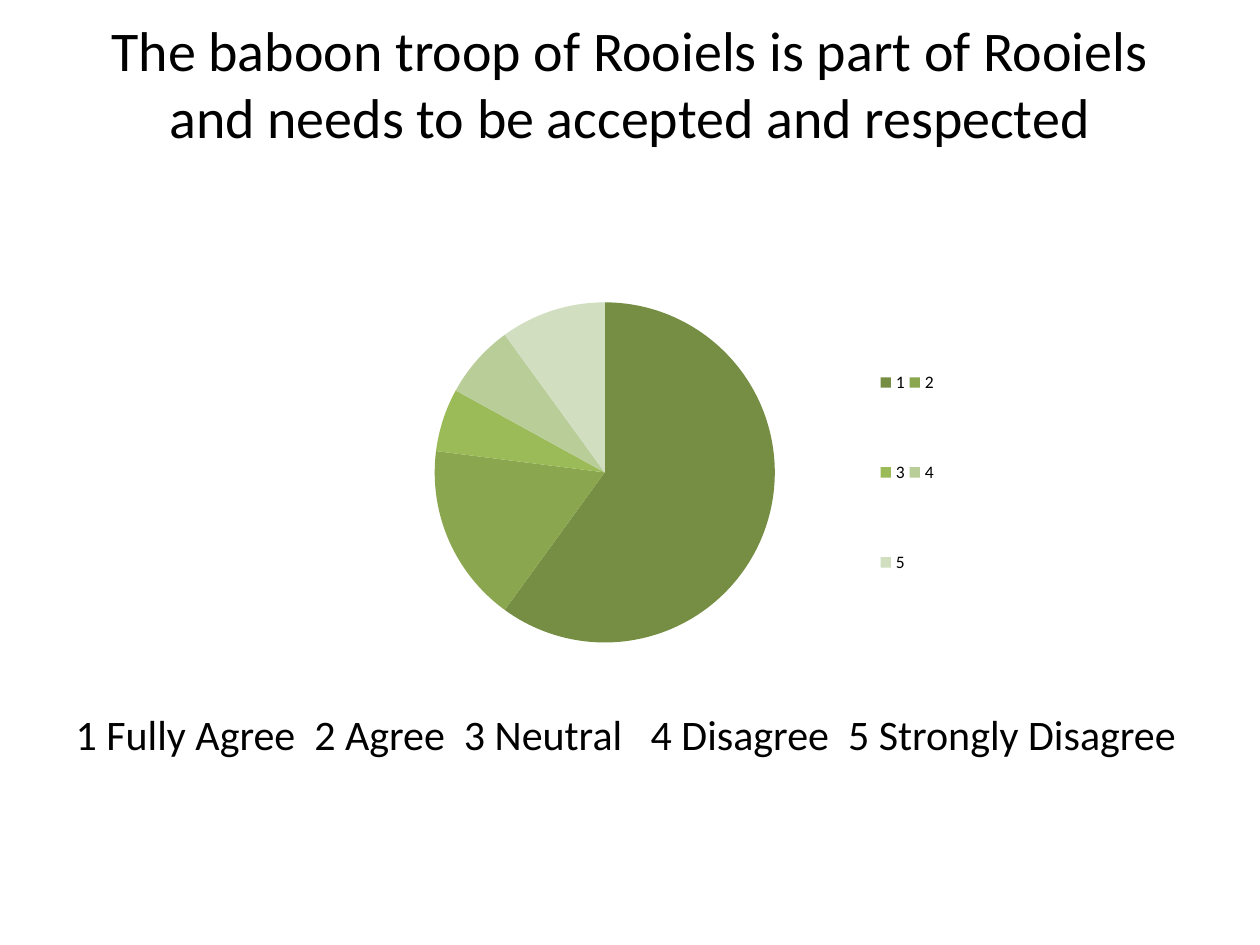
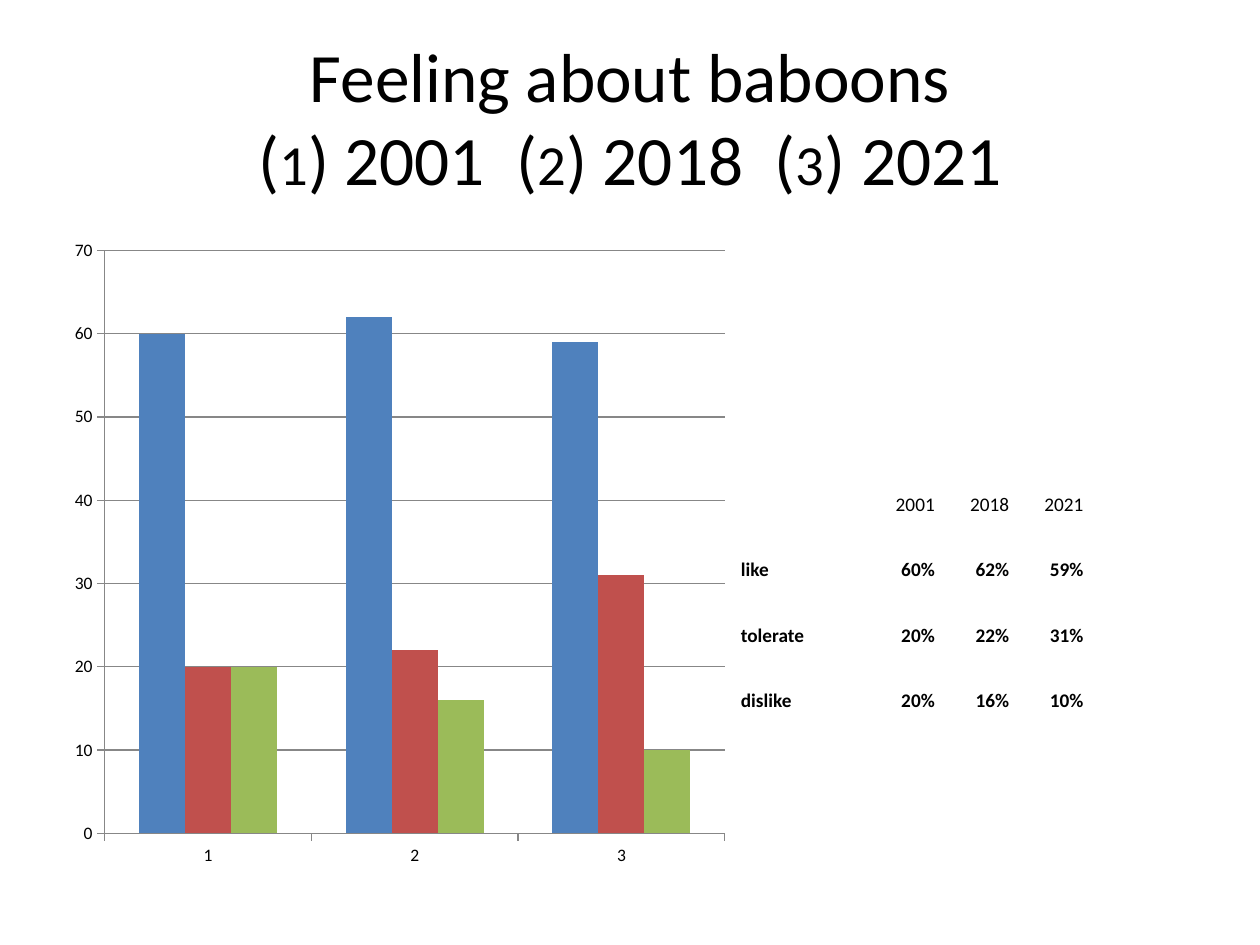
from lxml.etree import SubElement
from pptx import Presentation
from pptx.chart.data import CategoryChartData
from pptx.dml.color import RGBColor
from pptx.enum.chart import XL_CHART_TYPE, XL_LEGEND_POSITION, XL_TICK_MARK
from pptx.enum.text import MSO_ANCHOR, MSO_AUTO_SIZE, PP_ALIGN
from pptx.oxml.ns import qn
from pptx.util import Inches, Pt

FONT = "Calibri"
BLACK = "000000"
GRID_GREY = "878787"
AGREEMENT_GREENS = ["758E43", "8AA64F", "9BBB59", "B9CD99", "D1DEBF"]
FEELING_COLOURS = ["4F81BD", "C0504D", "9BBB59"]
TITLE_AND_BODY, TITLE_ONLY = 1, 5
TITLE_LEFT, TITLE_TOP, TITLE_WIDTH, TITLE_HEIGHT = 0.5, 0.3, 9, 1.25

YEARS = ["2001", "2018", "2021"]
FEELINGS = {"like": [60, 62, 59], "tolerate": [20, 22, 31], "dislike": [20, 16, 10]}


def colour(hex_string):
    return RGBColor.from_string(hex_string)


def style_font(font, size, bold=False):
    font.name = FONT
    font.size = Pt(size)
    font.bold = bold
    font.color.rgb = colour(BLACK)


def add_span(para, text, size, bold=False):
    span = para.add_run()
    span.text = text
    style_font(span.font, size, bold)


def place(box, left, top, width, height):
    box.left, box.top = Inches(left), Inches(top)
    box.width, box.height = Inches(width), Inches(height)


def title_para(page, top=TITLE_TOP):
    """Place the title and return its empty, centred paragraph."""
    title = page.shapes.title
    place(title, TITLE_LEFT, top, TITLE_WIDTH, TITLE_HEIGHT)
    frame = title.text_frame
    frame.auto_size = MSO_AUTO_SIZE.NONE
    frame.vertical_anchor = MSO_ANCHOR.MIDDLE
    para = frame.paragraphs[0]
    para.alignment = PP_ALIGN.CENTER
    return para


def add_scale_key(page, text):
    """Put the answer scale, without a bullet, low in the body."""
    body = page.placeholders[1]
    place(body, 0.5, 1.75, 9, 4.95)
    frame = body.text_frame
    frame.auto_size = MSO_AUTO_SIZE.NONE
    frame.vertical_anchor = MSO_ANCHOR.BOTTOM
    frame.margin_bottom = Inches(0.68)
    para = frame.paragraphs[0]
    add_span(para, text, 24)
    properties = para._p.get_or_add_pPr()
    properties.set("marL", "0")
    properties.set("indent", "0")
    SubElement(properties, qn("a:buNone"))


def set_layout(element, index, x, y, w, h, inner=False):
    """Fix a chart part's place, in shares of the chart."""
    for old in element.findall(qn("c:layout")):
        element.remove(old)
    layout = SubElement(element, qn("c:layout"))
    element.insert(index, layout)
    manual = SubElement(layout, qn("c:manualLayout"))
    settings = [("layoutTarget", "inner")] if inner else []
    settings += [("xMode", "edge"), ("yMode", "edge")]
    settings += [("x", x), ("y", y), ("w", w), ("h", h)]
    for name, value in settings:
        SubElement(manual, qn(f"c:{name}")).set("val", str(value))


def add_chart(page, kind, categories, series, frame, plot_area):
    data = CategoryChartData()
    data.categories = categories
    for number, values in enumerate(series, 1):
        data.add_series(f"Series {number}", values)
    chart = page.shapes.add_chart(kind, *map(Inches, frame), data).chart
    chart.has_title = False
    chart.has_legend = False
    style_font(chart.font, 10)
    set_layout(chart.element.xpath("c:chart/c:plotArea")[0], 0, *plot_area, inner=True)
    return chart


def paint(part, hex_string):
    part.format.fill.solid()
    part.format.fill.fore_color.rgb = colour(hex_string)


def grey_line(part):
    part.format.line.color.rgb = colour(GRID_GREY)
    part.format.line.width = Pt(0.75)


def add_agreement_pie(page):
    chart = add_chart(page, XL_CHART_TYPE.PIE, list("12345"), [[60, 17, 6, 7, 10]],
                      (2.5, 2.25, 5, 3), (0.19, 0.05, 0.54, 0.9))
    for index, green in enumerate(AGREEMENT_GREENS):
        paint(chart.plots[0].series[0].points[index], green)
    chart.has_legend = True
    chart.legend.position = XL_LEGEND_POSITION.RIGHT
    chart.legend.include_in_layout = False
    style_font(chart.legend.font, 10)
    set_layout(chart.element.xpath("c:chart/c:legend")[0], 1, 0.89, 0.05, 0.1, 0.9)


def add_feeling_columns(page):
    chart = add_chart(page, XL_CHART_TYPE.COLUMN_CLUSTERED, list("123"),
                      FEELINGS.values(), (0.51, 1.78, 5.35, 5.2),
                      (0.06, 0.04, 0.92, 0.89))
    plot = chart.plots[0]
    plot.gap_width = 150
    plot.overlap = 0
    plot.vary_by_categories = False
    for series, fill in zip(plot.series, FEELING_COLOURS):
        paint(series, fill)
        series.invert_if_negative = False
    for axis in (chart.category_axis, chart.value_axis):
        axis.major_tick_mark = XL_TICK_MARK.OUTSIDE
        axis.minor_tick_mark = XL_TICK_MARK.NONE
        grey_line(axis)
    value_axis = chart.value_axis
    value_axis.minimum_scale, value_axis.maximum_scale = 0, 70
    value_axis.major_unit = 10
    value_axis.has_major_gridlines = True
    grey_line(value_axis.major_gridlines)


def fill_cell(cell, text, bold, alignment):
    cell.fill.background()
    cell.vertical_anchor = MSO_ANCHOR.BOTTOM
    cell.margin_left = cell.margin_right = cell.margin_top = Inches(0.01)
    cell.margin_bottom = 0
    para = cell.text_frame.paragraphs[0]
    para.alignment = alignment
    if text:
        add_span(para, text, 11, bold)


def add_feeling_table(page):
    rows = [["", *YEARS]]
    rows += [[name, *(f"{value}%" for value in values)] for name, values in FEELINGS.items()]
    widths, heights = [0.97] + [0.59] * 3, [0.66] + [0.52] * 3
    table = page.shapes.add_table(len(rows), len(widths), Inches(5.87), Inches(3.44),
                                  Inches(sum(widths)), Inches(sum(heights))).table
    table.first_row = table.horz_banding = False
    for column, width in zip(table.columns, widths):
        column.width = Inches(width)
    for row_index, (texts, height) in enumerate(zip(rows, heights)):
        table.rows[row_index].height = Inches(height)
        for column_index, text in enumerate(texts):
            alignment = PP_ALIGN.RIGHT if column_index else PP_ALIGN.LEFT
            fill_cell(table.cell(row_index, column_index), text, row_index > 0, alignment)


def build_acceptance_page(deck):
    page = deck.slides.add_slide(deck.slide_layouts[TITLE_AND_BODY])
    add_span(title_para(page, top=0.03), "The baboon troop of Rooiels is part of Rooiels "
             "and needs to be accepted and respected", 32)
    add_scale_key(page, "1 Fully Agree  2 Agree  3 Neutral   4 Disagree  5 Strongly Disagree")
    add_agreement_pie(page)


def build_feeling_page(deck):
    page = deck.slides.add_slide(deck.slide_layouts[TITLE_ONLY])
    para = title_para(page)
    add_span(para, "Feeling about baboons", 39.6)
    para.add_line_break()
    opening = "("
    for number, year in enumerate(YEARS, 1):
        add_span(para, opening, 39.6)
        add_span(para, str(number), 32.4)
        opening = f") {year}  ("
    add_span(para, f") {YEARS[-1]}", 39.6)
    add_feeling_columns(page)
    add_feeling_table(page)


def main():
    deck = Presentation()
    deck.slide_width, deck.slide_height = Inches(10), Inches(7.5)
    build_acceptance_page(deck)
    build_feeling_page(deck)
    deck.save("out.pptx")


if __name__ == "__main__":
    main()
